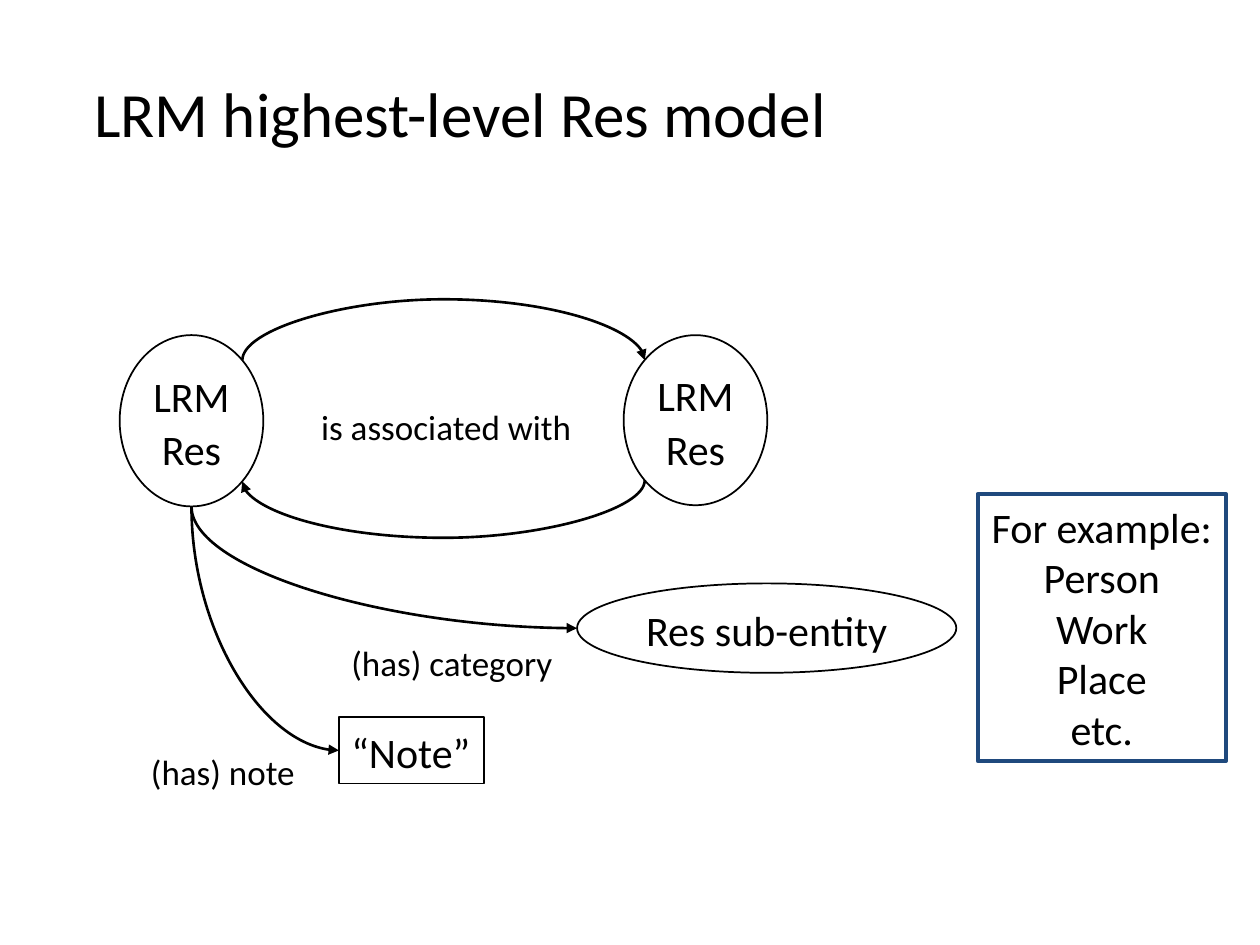
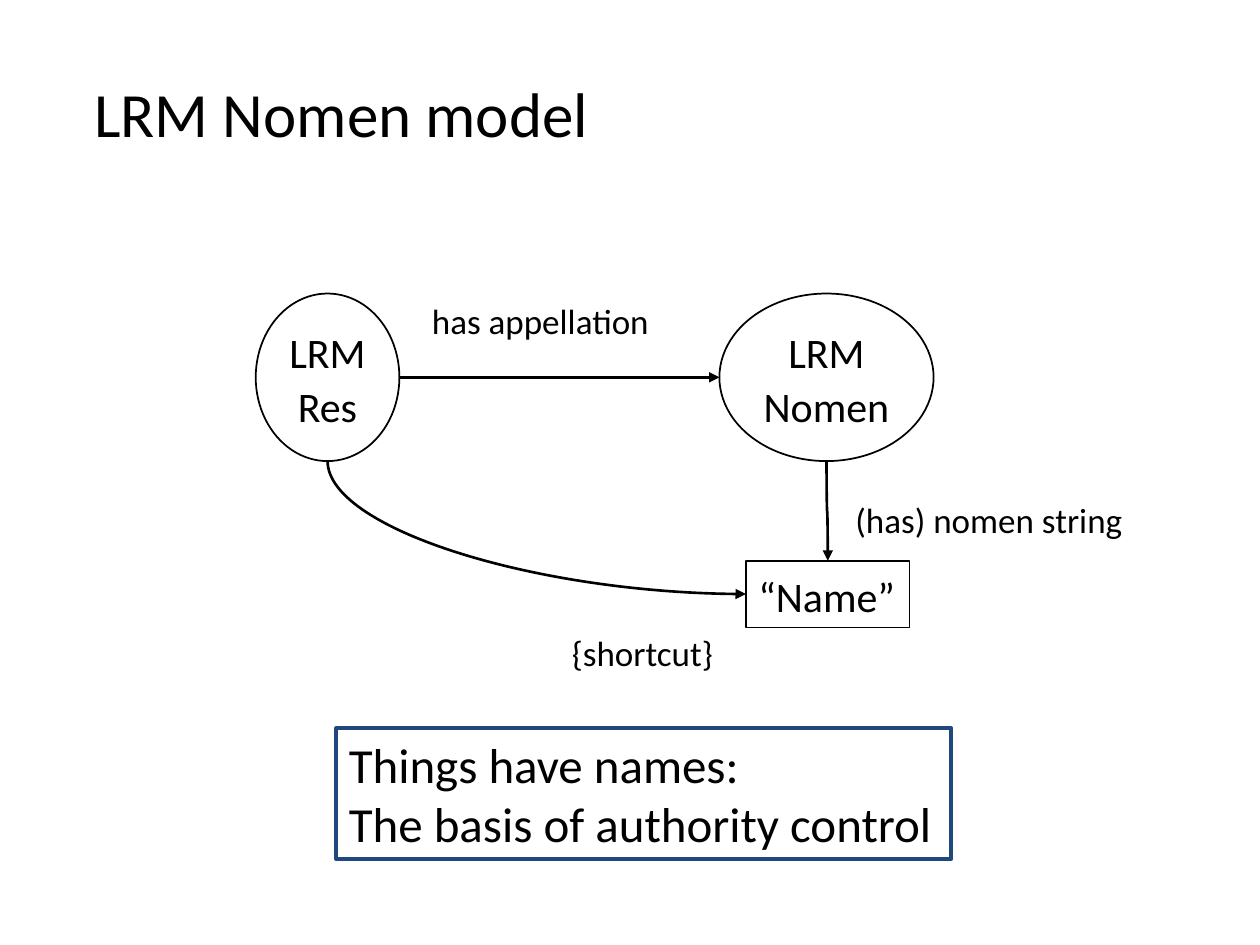
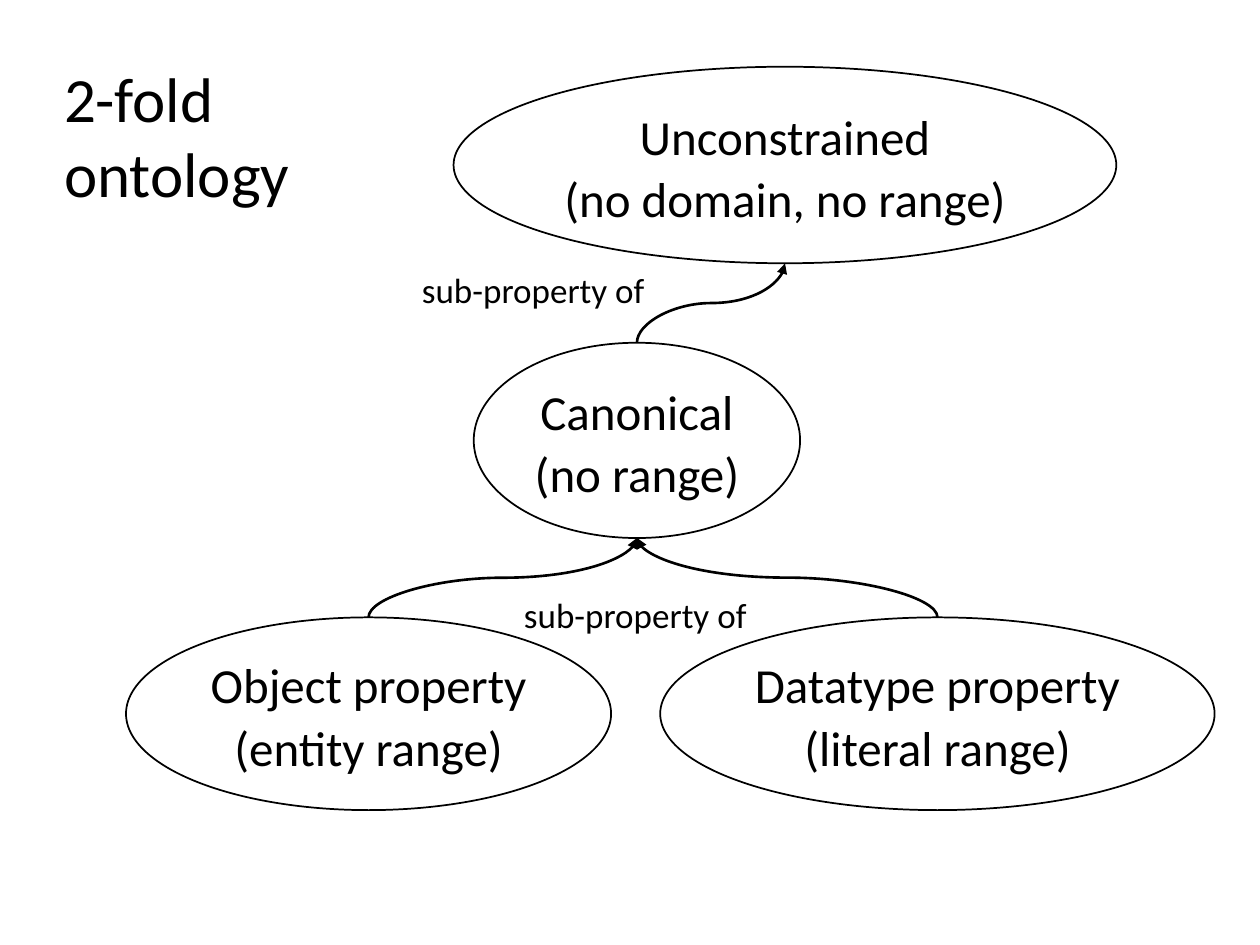
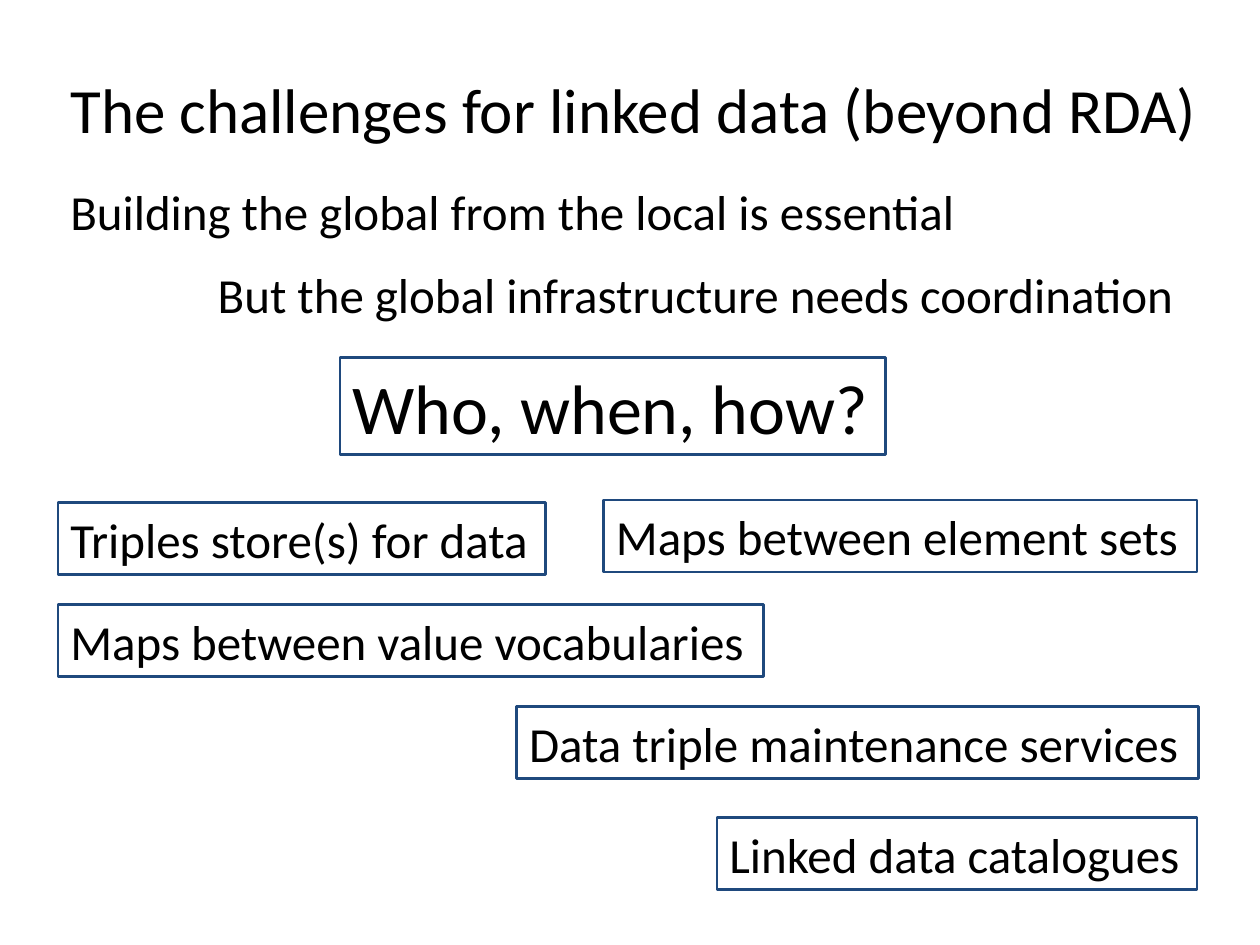
from lxml import etree
from pptx import Presentation
from pptx.dml.color import RGBColor
from pptx.enum.shapes import MSO_CONNECTOR, MSO_SHAPE
from pptx.enum.text import MSO_ANCHOR, MSO_AUTO_SIZE, PP_ALIGN
from pptx.oxml.ns import qn
from pptx.util import Inches, Pt

BLACK = RGBColor(0x00, 0x00, 0x00)
WHITE = RGBColor(0xFF, 0xFF, 0xFF)
NAVY = RGBColor(0x1F, 0x49, 0x7D)
FONT = "Calibri"
NODE_SPACING = 1.06
DIAGONAL = 0.5 ** 0.5 / 2
NEAR, FAR = 0.5 - DIAGONAL, 0.5 + DIAGONAL
ELLIPSE_SITES = {
    "top": (0, 0.5, 0), "top left": (1, NEAR, NEAR), "left": (2, 0, 0.5),
    "bottom left": (3, NEAR, FAR), "bottom": (4, 0.5, 1),
    "bottom right": (5, FAR, FAR), "right": (6, 1, 0.5), "top right": (7, FAR, NEAR),
}
RECT_SITES = {"top": (0, 0.5, 0), "left": (1, 0, 0.5),
              "bottom": (2, 0.5, 1), "right": (3, 1, 0.5)}


def write(sp, lines, size, align=PP_ALIGN.LEFT, spacing=None):
    """Fill a shape with unwrapped lines of text."""
    tf = sp.text_frame
    tf.text = "\n".join(lines)
    tf.word_wrap = False
    tf.auto_size = MSO_AUTO_SIZE.SHAPE_TO_FIT_TEXT
    for p in tf.paragraphs:
        p.alignment = align
        p.line_spacing = spacing
        p.font.name = FONT
        p.font.size = Pt(size)
        p.font.color.rgb = BLACK


def text(s, at, *lines, size=28, spacing=None):
    """Add a plain text box."""
    sp = s.shapes.add_textbox(*map(Inches, at))
    write(sp, lines, size, spacing=spacing)


def title(s, at, *lines):
    """Add the slide title."""
    text(s, at, *lines, size=36)


def label(s, at, words):
    """Add the label of a relationship."""
    text(s, at, words, size=20, spacing=NODE_SPACING)


def outlined(s, kind, at, line, weight, fill=None):
    """Add a shape with an outline and an optional fill."""
    sp = s.shapes.add_shape(kind, *map(Inches, at))
    sp.shadow.inherit = False
    if fill is None:
        sp.fill.background()
    else:
        sp.fill.solid()
        sp.fill.fore_color.rgb = fill
    sp.line.color.rgb = line
    sp.line.width = Pt(weight)
    sp.text_frame.vertical_anchor = MSO_ANCHOR.MIDDLE
    return sp


def entity(s, at, *lines, size=24):
    """Add an ellipse that stands for an entity."""
    sp = outlined(s, MSO_SHAPE.OVAL, at, BLACK, 1, WHITE)
    write(sp, lines, size, PP_ALIGN.CENTER, NODE_SPACING)
    return sp


def literal(s, at, words):
    """Add a rectangle that stands for a literal value."""
    sp = outlined(s, MSO_SHAPE.RECTANGLE, at, BLACK, 1, WHITE)
    write(sp, [words], 24, spacing=NODE_SPACING)
    return sp


def callout(s, at, *lines, size=28, weight=1.5, align=PP_ALIGN.LEFT):
    """Add a navy-framed remark."""
    sp = outlined(s, MSO_SHAPE.RECTANGLE, at, NAVY, weight)
    write(sp, lines, size, align)


def site(sp, side):
    """Return the connection index and position of a side of a shape."""
    is_oval = sp.auto_shape_type == MSO_SHAPE.OVAL
    idx, fx, fy = (ELLIPSE_SITES if is_oval else RECT_SITES)[side]
    return idx, sp.left + round(sp.width * fx), sp.top + round(sp.height * fy)


def arrow(s, source, start, target, end, bulge=None):
    """Join two shapes with a curved arrow that leaves the source squarely."""
    start_idx, x1, y1 = site(source, start)
    end_idx, x2, y2 = site(target, end)
    dx, dy = x2 - x1, y2 - y1
    cxn = s.shapes.add_connector(MSO_CONNECTOR.CURVE, x1, y1, x2, y2)
    cxn.begin_connect(source, 0)
    cxn.end_connect(target, 0)
    el = cxn._element
    el.find(".//" + qn("a:stCxn")).set("idx", str(start_idx))
    el.find(".//" + qn("a:endCxn")).set("idx", str(end_idx))

    vertical = start not in ("left", "right")
    width, height = (abs(dy), abs(dx)) if vertical else (abs(dx), abs(dy))
    cxn.left, cxn.top = (x1 + x2 - width) // 2, (y1 + y2 - height) // 2
    cxn.width, cxn.height = width, height
    xfrm = el.spPr.find(qn("a:xfrm"))
    for flip in ("flipH", "flipV"):
        xfrm.attrib.pop(flip, None)
    if vertical:
        xfrm.set("rot", str((90 if dy > 0 else 270) * 60000))
        if dx * dy > 0:
            xfrm.set("flipV", "1")

    geom = el.spPr.find(qn("a:prstGeom"))
    if vertical and end == "left":
        geom.set("prst", "curvedConnector2")
    if bulge:
        guides = geom.find(qn("a:avLst"))
        if guides is None:
            guides = etree.SubElement(geom, qn("a:avLst"))
        ratio = round(Inches(bulge) / width * 100000)
        etree.SubElement(guides, qn("a:gd"), name="adj1", fmla=f"val {ratio}")

    cxn.line.color.rgb = BLACK
    cxn.line.width = Pt(1.5)
    etree.SubElement(cxn.line._get_or_add_ln(), qn("a:tailEnd"), type="triangle")
    etree.SubElement(el.spPr, qn("a:effectLst"))


def res_model(s):
    """Draw the highest-level Res model."""
    res = entity(s, (0.95, 2.66, 1.14, 1.36), "LRM", "Res")
    other = entity(s, (4.95, 2.66, 1.14, 1.35), "LRM", "Res")
    arrow(s, res, "top right", other, "top left", bulge=0.45)
    arrow(s, other, "bottom left", res, "bottom right", bulge=0.45)
    label(s, (2.45, 3.15, 2.21, 0.46), "is associated with")
    note = literal(s, (2.69, 5.69, 1.15, 0.53), "“Note”")
    sub_entity = entity(s, (4.58, 4.63, 3.01, 0.71), "Res sub-entity")
    for target in (sub_entity, note):
        arrow(s, res, "bottom", target, "left")
    label(s, (2.69, 5.02, 1.81, 0.46), "(has) category")
    label(s, (1.1, 5.89, 1.36, 0.44), "(has) note")
    title(s, (0.65, 0.54, 6.08, 0.71), "LRM highest-level Res model")
    callout(s, (7.76, 3.92, 1.97, 2.12), "For example:", "Person", "Work", "Place",
            "etc.", size=24, weight=2.25, align=PP_ALIGN.CENTER)


def nomen_model(s):
    """Draw the Nomen model."""
    res = entity(s, (2.03, 2.33, 1.14, 1.33), "LRM", "Res")
    nomen = entity(s, (5.71, 2.33, 1.7, 1.33), "LRM", "Nomen")
    name = literal(s, (5.92, 4.45, 1.3, 0.53), "“Name”")
    arrow(s, res, "right", nomen, "left")
    arrow(s, nomen, "bottom", name, "top")
    arrow(s, res, "bottom", name, "left")
    label(s, (3.33, 2.31, 1.94, 0.45), "has appellation")
    label(s, (6.69, 3.89, 2.34, 0.45), "(has) nomen string")
    label(s, (4.44, 4.94, 1.33, 0.44), "{shortcut}")
    title(s, (0.65, 0.54, 4.16, 0.71), "LRM Nomen model")
    callout(s, (2.67, 5.78, 4.88, 1.04), "Things have names:",
            "The basis of authority control", weight=2.25)


def ontology(s):
    """Draw the 2-fold ontology."""
    unconstrained = entity(s, (3.6, 0.53, 5.26, 1.56), "Unconstrained",
                           "(no domain, no range)", size=28)
    canonical = entity(s, (3.76, 2.72, 2.59, 1.55), "Canonical", "(no range)", size=28)
    object_property = entity(s, (1, 4.9, 3.85, 1.53), "Object property",
                             "(entity range)", size=28)
    datatype_property = entity(s, (5.24, 4.9, 4.4, 1.53), "Datatype property",
                               "(literal range)", size=28)
    for child, parent in ((canonical, unconstrained), (object_property, canonical),
                          (datatype_property, canonical)):
        arrow(s, child, "top", parent, "bottom")
    for left, top in ((3.25, 2.06), (4.06, 4.64)):
        label(s, (left, top, 1.98, 0.46), "sub-property of")
    title(s, (0.41, 0.42, 2.01, 1.31), "2-fold", "ontology")


def challenges(s):
    """Set out the challenges for linked data."""
    title(s, (0.46, 0.51, 9.22, 0.71), "The challenges for linked data (beyond RDA)")
    text(s, (0.46, 1.39, 7.34, 0.57), "Building the global from the local is essential")
    text(s, (1.63, 2.05, 7.87, 0.57), "But the global infrastructure needs coordination")
    for left, top, width, words in (
        (0.46, 3.99, 3.87, "Triples store(s) for data"),
        (4.79, 3.97, 4.71, "Maps between element sets"),
        (0.46, 4.8, 5.6, "Maps between value vocabularies"),
        (4.1, 5.61, 5.41, "Data triple maintenance services"),
        (5.69, 6.49, 3.81, "Linked data catalogues"),
    ):
        callout(s, (left, top, width, 0.57), words)
    callout(s, (2.7, 2.84, 4.33, 0.77), "Who, when, how?", size=40)


def main():
    """Build and save the presentation."""
    prs = Presentation()
    prs.slide_width, prs.slide_height = Inches(10), Inches(7.5)
    for draw in (res_model, nomen_model, ontology, challenges):
        draw(prs.slides.add_slide(prs.slide_layouts[6]))
    prs.save("out.pptx")


if __name__ == "__main__":
    main()
